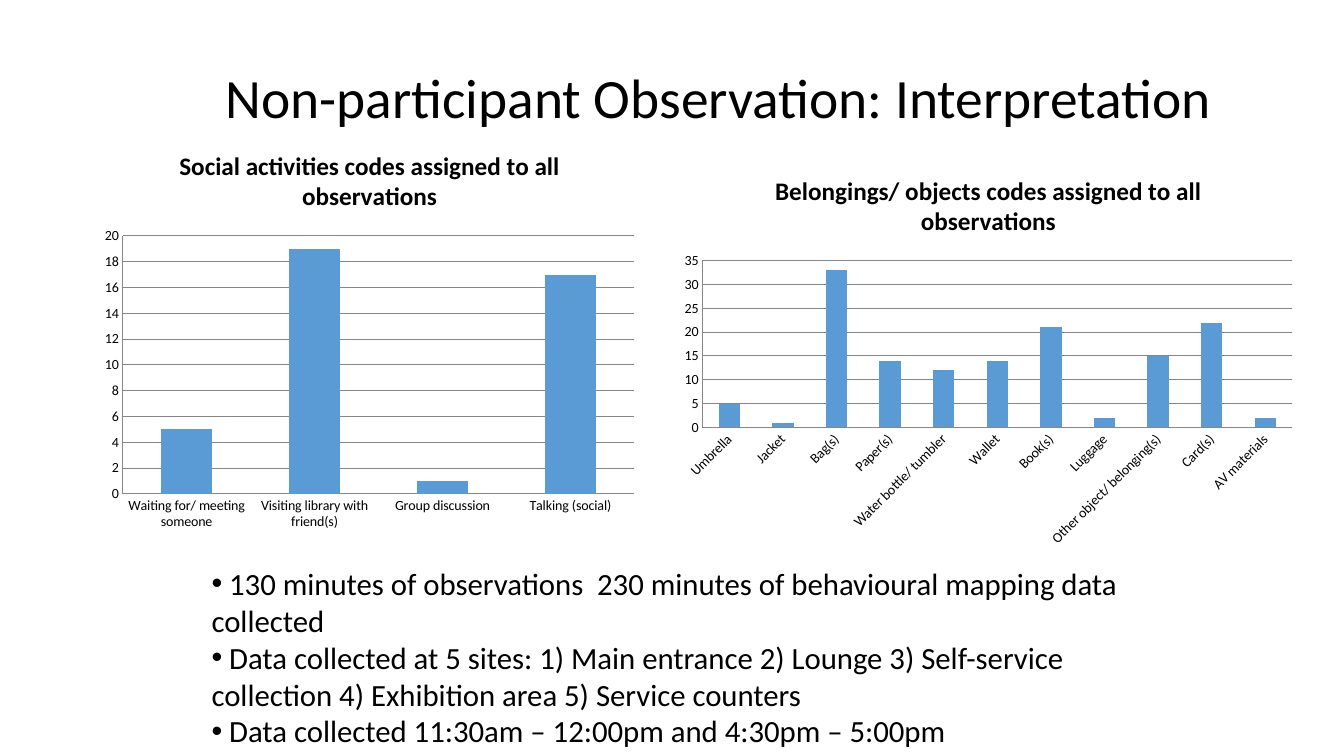
from lxml import etree
from pptx import Presentation
from pptx.chart.data import CategoryChartData
from pptx.dml.color import RGBColor
from pptx.enum.chart import XL_CHART_TYPE as ChartType, XL_TICK_MARK as TickMark
from pptx.enum.text import MSO_ANCHOR as Anchor, MSO_AUTO_SIZE as AutoSize, PP_ALIGN as Align
from pptx.oxml.ns import qn
from pptx.util import Pt

TITLE = "Non-participant Observation: Interpretation"
FINDINGS = [
    " 130 minutes of observations  230 minutes of behavioural mapping data collected",
    " Data collected at 5 sites: 1) Main entrance 2) Lounge 3) Self-service collection "
    "4) Exhibition area 5) Service counters",
    " Data collected 11:30am – 12:00pm and 4:30pm – 5:00pm",
]
SOCIAL_ACTIVITIES = {
    "Waiting for/ meeting someone": 5,
    "Visiting library with friend(s)": 19,
    "Group discussion": 1,
    "Talking (social)": 17,
}
BELONGINGS = {
    "Umbrella": 5, "Jacket": 1, "Bag(s)": 33, "Paper(s)": 14,
    "Water bottle/ tumbler": 12, "Wallet": 14, "Book(s)": 21, "Luggage": 2,
    "Other object/ belonging(s)": 15, "Card(s)": 22, "AV materials": 2,
}


def color(value):
    return RGBColor.from_string(value)


def apply(target, values):
    """Set every attribute named in a dict of format values."""
    for name, value in values.items():
        setattr(target, name, value)


class ObservationSlide:
    FONT = "Calibri"
    INK, BAR, GRID = "000000", "5B9BD5", "868686"

    def __init__(self, deck):
        self.page = deck.slides.add_slide(deck.slide_layouts[5])

    def style_font(self, font, size, bold=False):
        apply(font, {"name": self.FONT, "size": Pt(size), "bold": bold})
        font.color.rgb = color(self.INK)

    def style_line(self, line):
        line.color.rgb = color(self.GRID)
        line.width = Pt(0.75)

    def title(self, text, left, top, width, height):
        box = self.page.shapes.title
        apply(box, {"left": Pt(left), "top": Pt(top),
                    "width": Pt(width), "height": Pt(height)})
        frame = box.text_frame
        apply(frame, {"text": text, "word_wrap": True, "auto_size": AutoSize.NONE,
                      "vertical_anchor": Anchor.MIDDLE})
        para = frame.paragraphs[0]
        apply(para, {"alignment": Align.LEFT, "line_spacing": 0.9})
        self.style_font(para.runs[0].font, 39.6)

    def bullets(self, lines, left, top, width, height, size):
        box = self.page.shapes.add_textbox(Pt(left), Pt(top), Pt(width), Pt(height))
        frame = box.text_frame
        apply(frame, {"word_wrap": True, "auto_size": AutoSize.SHAPE_TO_FIT_TEXT,
                      "text": "\n".join(lines)})
        for para in frame.paragraphs:
            properties = para._p.get_or_add_pPr()
            etree.SubElement(properties, qn("a:buFont"), typeface="Arial")
            etree.SubElement(properties, qn("a:buChar"), char="•")
            self.style_font(para.runs[0].font, size)

    def column_chart(self, title, counts, top_value, step, left, top, width, height):
        data = CategoryChartData()
        data.categories = list(counts)
        data.add_series("Series 1", list(counts.values()))
        chart = self.page.shapes.add_chart(
            ChartType.COLUMN_CLUSTERED, Pt(left), Pt(top), Pt(width), Pt(height), data
        ).chart
        self.style_font(chart.font, 10)
        apply(chart, {"has_legend": False, "has_title": True})
        heading = chart.chart_title
        heading.include_in_layout = False
        heading.text_frame.text = title
        self.style_font(heading.text_frame.paragraphs[0].runs[0].font, 18, bold=True)

        for axis in (chart.category_axis, chart.value_axis):
            apply(axis, {"major_tick_mark": TickMark.NONE,
                         "minor_tick_mark": TickMark.NONE})
            self.style_line(axis.format.line)
        apply(chart.value_axis, {"minimum_scale": 0, "maximum_scale": top_value,
                                 "major_unit": step, "has_major_gridlines": True})
        self.style_line(chart.value_axis.major_gridlines.format.line)

        plot = chart.plots[0]
        apply(plot, {"gap_width": 150, "vary_by_categories": False})
        fill = plot.series[0].format.fill
        fill.solid()
        fill.fore_color.rgb = color(self.BAR)


def main():
    deck = Presentation()
    apply(deck, {"slide_width": Pt(960), "slide_height": Pt(540)})
    slide = ObservationSlide(deck)
    slide.title(TITLE, 154, 33, 752.5, 78)
    slide.bullets(FINDINGS, 144, 399.6, 672, 140.4, size=22)
    slide.column_chart("Social activities codes assigned to all observations",
                       SOCIAL_ACTIVITIES, 20, 2, 67, 93, 394, 291)
    slide.column_chart("Belongings/ objects codes assigned to all observations",
                       BELONGINGS, 35, 5, 480, 111, 452, 285)
    deck.save("out.pptx")


if __name__ == "__main__":
    main()
